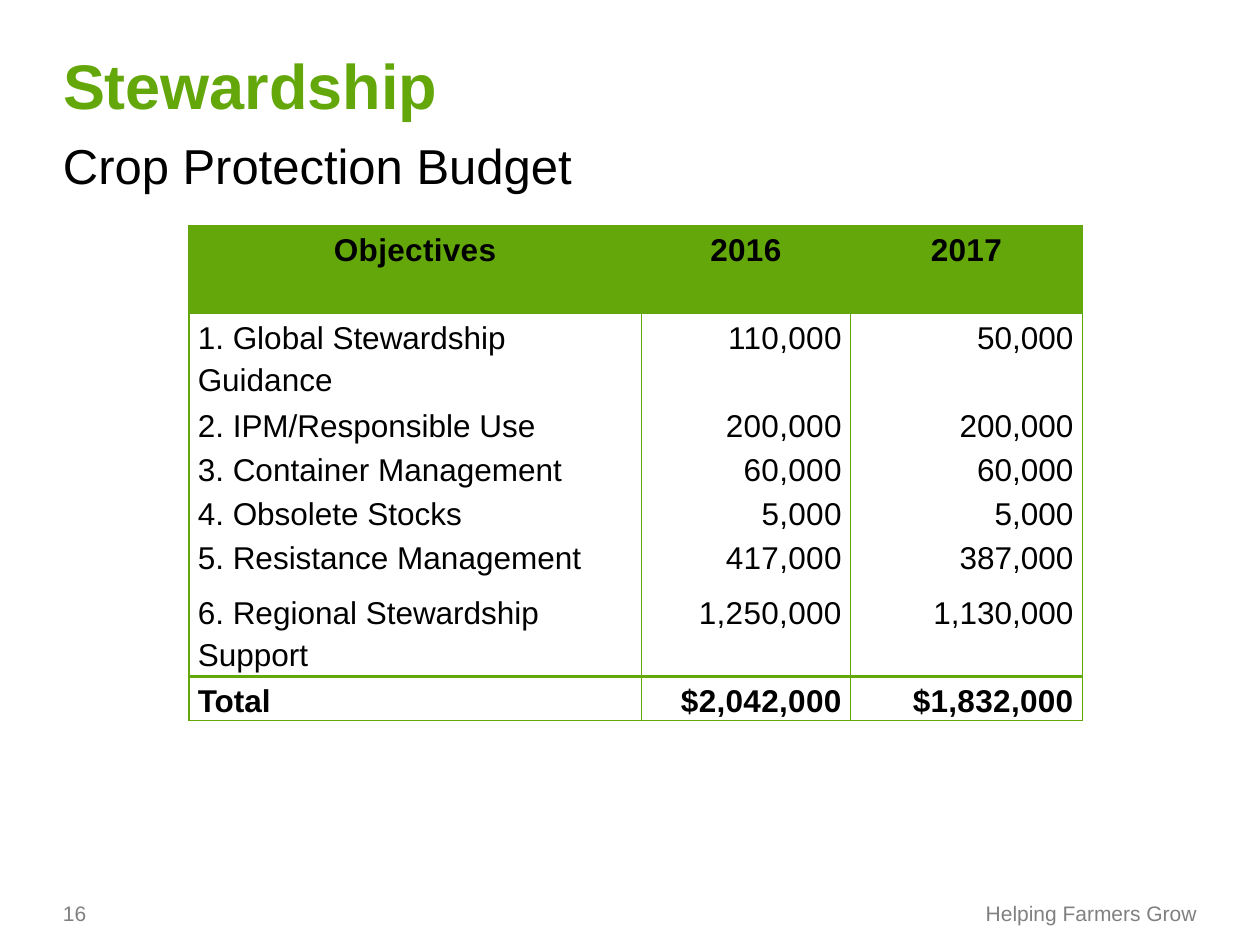
from dataclasses import dataclass
from typing import Any, NamedTuple

from lxml.etree import SubElement as Sub
from pptx import Presentation
from pptx.dml.color import RGBColor as Rgb
from pptx.enum.text import MSO_ANCHOR as Anchor, MSO_AUTO_SIZE as Auto, PP_ALIGN as Align
from pptx.oxml.ns import qn
from pptx.util import Inches, Pt


@dataclass(frozen=True)
class Theme:
    font: str = "Arial"
    green: str = "64A70B"
    black: str = "000000"
    gray: str = "808080"
    title: float = 36
    sub: float = 28
    body: float = 18
    foot: float = 12
    thin: float = 1
    thick: float = 2.25
    track: str = "20"


class Label(NamedTuple):
    text: str
    box: tuple[float, float, float, float]
    size: float
    color: str
    bold: bool = False
    align: Align = Align.LEFT
    anchor: Anchor = Anchor.BOTTOM


class Row(NamedTuple):
    texts: tuple[str, str, str]
    high: float
    kind: str = "body"


THEME = Theme()
TITLE = Label("Stewardship", (0.5, 0.37, 6.25, 0.61), THEME.title, THEME.green,
              bold=True, anchor=Anchor.TOP)
LABELS = [
    Label("Crop Protection Budget", (0.5, 1.14, 9, 0.4), THEME.sub, THEME.black),
    Label("16", (0.5, 7.14, 1.17, 0.21), THEME.foot, THEME.gray),
    Label("Helping Farmers Grow", (7.77, 7.14, 1.73, 0.21), THEME.foot, THEME.gray,
          align=Align.RIGHT),
]
WIDTHS = [3.59, 1.66, 1.84]
ROWS = [
    Row(("Objectives", "2016", "2017"), 0.7, "head"),
    Row(("1. Global Stewardship Guidance", "110,000", "50,000"), 0.7),
    Row(("2. IPM/Responsible Use", "200,000", "200,000"), 0.35),
    Row(("3. Container Management", "60,000", "60,000"), 0.35),
    Row(("4. Obsolete Stocks", "5,000", "5,000"), 0.35),
    Row(("5. Resistance Management", "417,000", "387,000"), 0.43),
    Row(("6. Regional Stewardship Support", "1,250,000", "1,130,000"), 0.7, "last"),
    Row(("Total", "$2,042,000", "$1,832,000"), 0.35, "total"),
]
# Line widths by row kind; sides not named have no line
SIDES = {"L": THEME.thin, "R": THEME.thin}
EDGES = {
    "head": SIDES | {"T": THEME.thin},
    "body": SIDES,
    "last": SIDES | {"B": THEME.thick},
    "total": SIDES | {"T": THEME.thick, "B": THEME.thin},
}


def apply(item: Any, values: dict[str, Any]) -> None:
    for name, value in values.items():
        setattr(item, name, value)


def write(para: Any, text: str, size: float, color: str, bold: bool) -> Any:
    run = para.add_run()
    run.text = text
    apply(run.font, {"name": THEME.font, "size": Pt(size), "bold": bold})
    run.font.color.rgb = Rgb.from_string(color)
    return run


def fill_label(shape: Any, label: Label) -> None:
    left, top, width, height = map(Inches, label.box)
    apply(shape, {"left": left, "top": top, "width": width, "height": height})
    frame = shape.text_frame
    apply(frame, {"margin_left": 0, "margin_top": 0, "margin_right": 0,
                  "margin_bottom": 0, "word_wrap": True, "auto_size": Auto.NONE,
                  "vertical_anchor": label.anchor})
    para = frame.paragraphs[0]
    para.alignment = label.align
    write(para, label.text, label.size, label.color, label.bold)


def draw_edges(cell: Any, edges: dict[str, float]) -> None:
    props = cell._tc.get_or_add_tcPr()
    for side in "LRTB":
        line = Sub(props, qn(f"a:ln{side}"))
        if side in edges:
            line.set("w", str(Pt(edges[side])))
            fill = Sub(line, qn("a:solidFill"))
            Sub(fill, qn("a:srgbClr"), val=THEME.green)
        else:
            line.set("w", "0")
            Sub(line, qn("a:noFill"))


def fill_cell(cell: Any, row: Row, col: int) -> None:
    head, total = row.kind == "head", row.kind == "total"
    apply(cell, {"margin_left": Inches(0.07), "margin_right": Inches(0.07),
                 "margin_top": 0, "margin_bottom": 0,
                 "vertical_anchor": Anchor.TOP})
    draw_edges(cell, EDGES[row.kind])
    if head:
        cell.fill.solid()
        cell.fill.fore_color.rgb = Rgb.from_string(THEME.green)
    else:
        cell.fill.background()
    para = cell.text_frame.paragraphs[0]
    side = Align.CENTER if head else Align.RIGHT if col else Align.LEFT
    apply(para, {"alignment": side, "line_spacing": 1.2})
    run = write(para, row.texts[col], THEME.body, THEME.black, head or total)
    # Header, 2016 figures and totals are set slightly wider
    if head or col == 1 or (total and col):
        run._r.get_or_add_rPr().set("spc", THEME.track)


def draw_table(slide: Any) -> None:
    high = sum(row.high for row in ROWS)
    table = slide.shapes.add_table(
        len(ROWS), len(WIDTHS), Inches(1.5), Inches(1.79),
        Inches(sum(WIDTHS)), Inches(high)).table
    apply(table, {"first_row": False, "horz_banding": False})
    for col, width in zip(table.columns, WIDTHS):
        col.width = Inches(width)
    for r, row in enumerate(ROWS):
        table.rows[r].height = Inches(row.high)
        for c in range(len(WIDTHS)):
            fill_cell(table.cell(r, c), row, c)


def main() -> None:
    deck = Presentation()
    apply(deck, {"slide_width": Inches(10), "slide_height": Inches(7.5)})
    slide = deck.slides.add_slide(deck.slide_layouts[5])
    # Title, subtitle and footer
    fill_label(slide.shapes.title, TITLE)
    for label in LABELS:
        fill_label(slide.shapes.add_textbox(*map(Inches, label.box)), label)
    # Budget by objective
    draw_table(slide)
    deck.save("out.pptx")


if __name__ == "__main__":
    main()
